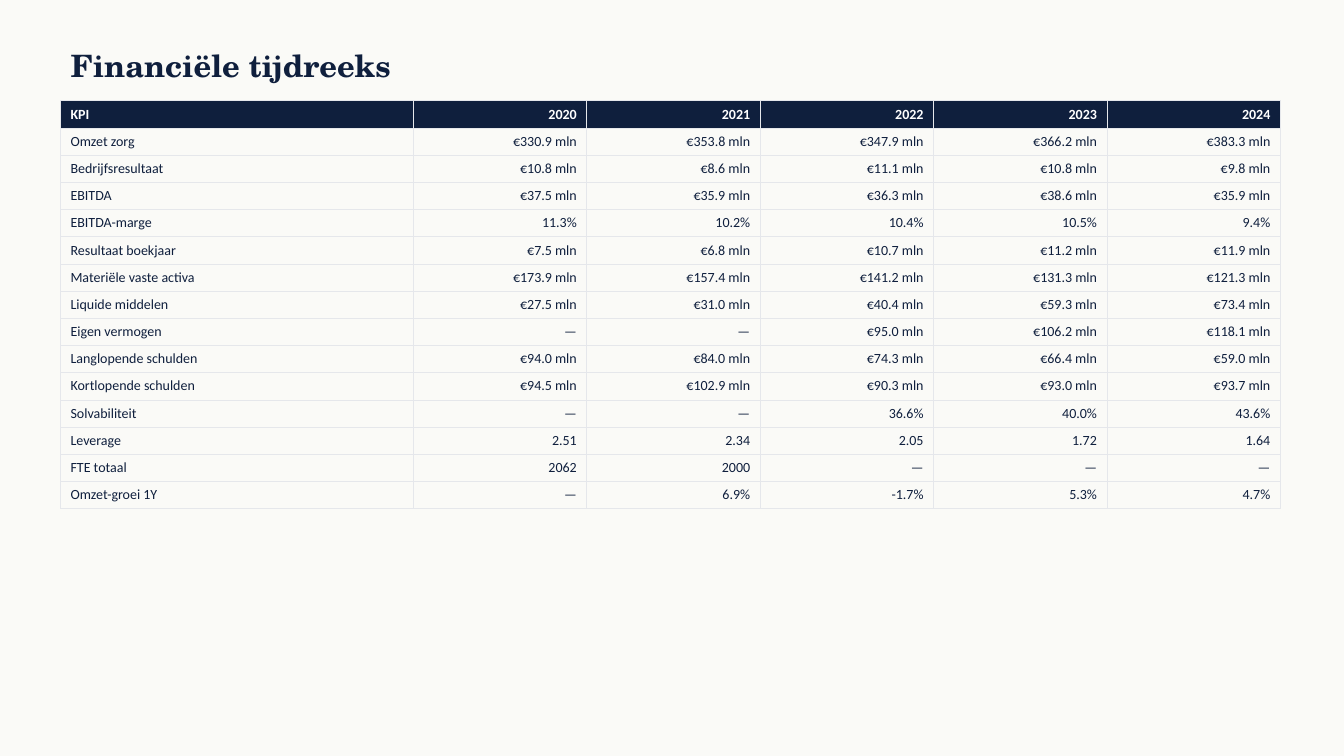
from dataclasses import dataclass

from lxml import etree
from pptx import Presentation
from pptx.dml.color import RGBColor
from pptx.enum import text
from pptx.oxml.ns import qn
from pptx.util import Inches, Pt

TITLE = "Financiële tijdreeks"
HEADER = ("KPI", "2020", "2021", "2022", "2023", "2024")
KPIS = [
    ("Omzet zorg", "€330.9 mln", "€353.8 mln", "€347.9 mln", "€366.2 mln", "€383.3 mln"),
    ("Bedrijfsresultaat", "€10.8 mln", "€8.6 mln", "€11.1 mln", "€10.8 mln", "€9.8 mln"),
    ("EBITDA", "€37.5 mln", "€35.9 mln", "€36.3 mln", "€38.6 mln", "€35.9 mln"),
    ("EBITDA-marge", "11.3%", "10.2%", "10.4%", "10.5%", "9.4%"),
    ("Resultaat boekjaar", "€7.5 mln", "€6.8 mln", "€10.7 mln", "€11.2 mln", "€11.9 mln"),
    ("Materiële vaste activa", "€173.9 mln", "€157.4 mln", "€141.2 mln", "€131.3 mln", "€121.3 mln"),
    ("Liquide middelen", "€27.5 mln", "€31.0 mln", "€40.4 mln", "€59.3 mln", "€73.4 mln"),
    ("Eigen vermogen", "—", "—", "€95.0 mln", "€106.2 mln", "€118.1 mln"),
    ("Langlopende schulden", "€94.0 mln", "€84.0 mln", "€74.3 mln", "€66.4 mln", "€59.0 mln"),
    ("Kortlopende schulden", "€94.5 mln", "€102.9 mln", "€90.3 mln", "€93.0 mln", "€93.7 mln"),
    ("Solvabiliteit", "—", "—", "36.6%", "40.0%", "43.6%"),
    ("Leverage", "2.51", "2.34", "2.05", "1.72", "1.64"),
    ("FTE totaal", "2062", "2000", "—", "—", "—"),
    ("Omzet-groei 1Y", "—", "6.9%", "-1.7%", "5.3%", "4.7%"),
]


@dataclass(frozen=True)
class Theme:
    background: str = "FAFAF7"
    navy: str = "0F1F3D"
    white: str = "FFFFFF"
    border: str = "E5E7EB"
    border_width: float = 0.5
    title_font: str = "TeX Gyre Schola"
    title_size: int = 22
    table_font: str = "Calibri"
    table_size: int = 10


THEME = Theme()
LEFT, TABLE_TOP = 0.6, 1
TABLE_WIDTH, KPI_WIDTH, ROW_HEIGHT = 12.1, 3.5, 0.27


def add_run(paragraph, content, font_name, size, color, bold):
    run = paragraph.add_run()
    run.text = content
    run.font.name = font_name
    run.font.size = Pt(size)
    run.font.bold = bold
    run.font.color.rgb = RGBColor.from_string(color)


def add_borders(cell):
    """Draw all four sides; call before setting the fill, which must follow them in the XML."""
    properties = cell._tc.get_or_add_tcPr()
    for side in ("a:lnL", "a:lnR", "a:lnT", "a:lnB"):
        line = etree.SubElement(properties, qn(side), w=str(Pt(THEME.border_width)))
        fill = etree.SubElement(line, qn("a:solidFill"))
        etree.SubElement(fill, qn("a:srgbClr"), val=THEME.border)


def add_title(slide):
    title = slide.shapes.title
    title.left, title.top = Inches(LEFT), Inches(0.4)
    title.width, title.height = Inches(12), Inches(0.5)
    frame = title.text_frame
    frame.vertical_anchor = text.MSO_ANCHOR.MIDDLE
    frame.auto_size = text.MSO_AUTO_SIZE.NONE
    paragraph = frame.paragraphs[0]
    paragraph.alignment = text.PP_ALIGN.LEFT
    add_run(paragraph, TITLE, THEME.title_font, THEME.title_size, THEME.navy, True)


def add_kpi_table(slide):
    rows = [HEADER, *KPIS]
    table = slide.shapes.add_table(
        len(rows), len(HEADER), Inches(LEFT), Inches(TABLE_TOP),
        Inches(TABLE_WIDTH), Inches(ROW_HEIGHT * len(rows))).table
    table.horz_banding = False
    year_width = (TABLE_WIDTH - KPI_WIDTH) / (len(HEADER) - 1)
    for index, column in enumerate(table.columns):
        column.width = Inches(year_width if index else KPI_WIDTH)

    for row_index, values in enumerate(rows):
        table.rows[row_index].height = Inches(ROW_HEIGHT)
        is_header = row_index == 0
        for column_index, value in enumerate(values):
            cell = table.cell(row_index, column_index)
            add_borders(cell)
            if is_header:
                cell.fill.solid()
                cell.fill.fore_color.rgb = RGBColor.from_string(THEME.navy)
            else:
                cell.fill.background()
            paragraph = cell.text_frame.paragraphs[0]
            paragraph.alignment = text.PP_ALIGN.RIGHT if column_index else text.PP_ALIGN.LEFT
            color = THEME.white if is_header else THEME.navy
            add_run(paragraph, value, THEME.table_font, THEME.table_size, color, is_header)


def main():
    presentation = Presentation()
    presentation.slide_width, presentation.slide_height = Inches(13.33), Inches(7.5)
    title_only = presentation.slide_layouts[5]
    slide = presentation.slides.add_slide(title_only)
    slide.background.fill.solid()
    slide.background.fill.fore_color.rgb = RGBColor.from_string(THEME.background)
    add_title(slide)
    add_kpi_table(slide)
    presentation.save("out.pptx")


if __name__ == "__main__":
    main()
